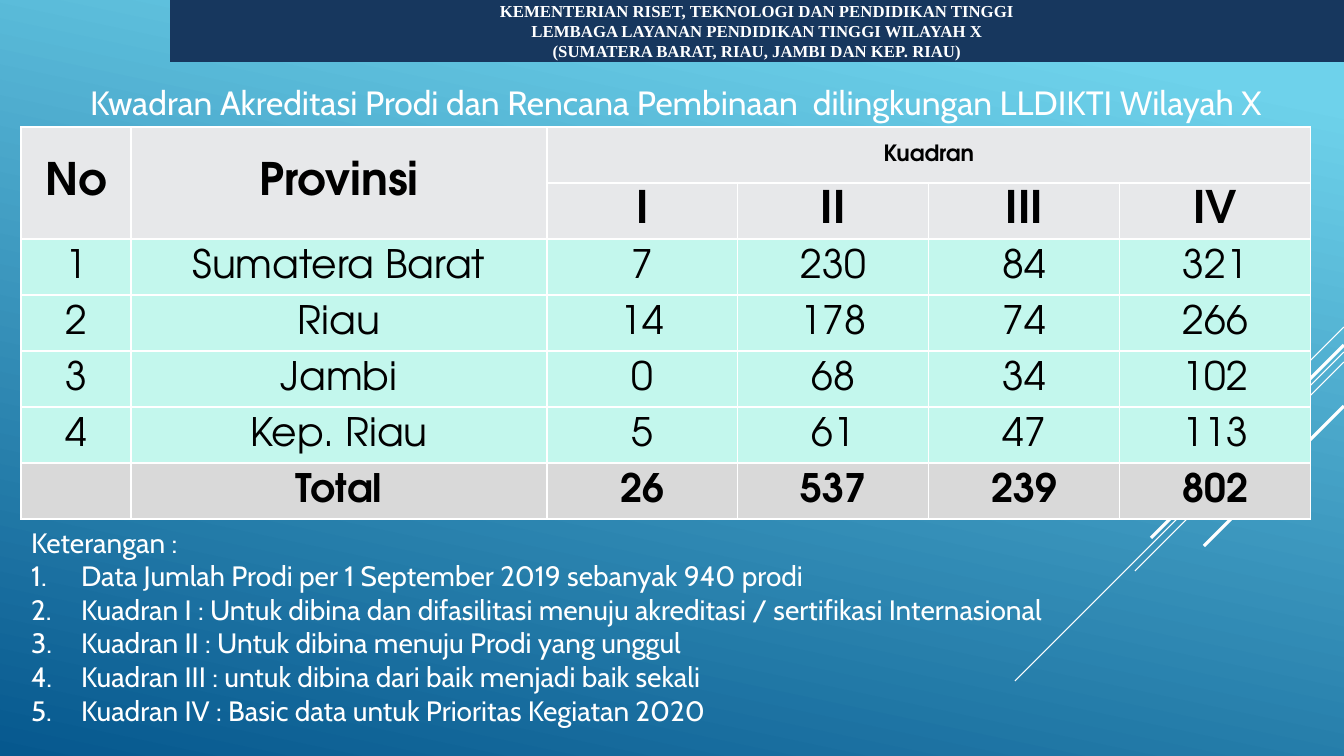
from pptx import Presentation, util as u
from pptx.dml.color import RGBColor
from pptx.enum import shapes, text
from pptx.oxml.ns import qn
from lxml import etree

SLIDE_W, SLIDE_H = 1344, 756
EMU_PER_PX = 12192000 / SLIDE_W
WHITE = "FFFFFF"
HEAD_FILL, BODY_FILL, TOTAL_FILL = "E7E8EA", "C3F7ED", "D9D9D9"
BODY_FONT, TABLE_FONT = "Cabin", "TeX Gyre Adventor"

COLUMN_WIDTHS = [110, 416, 191, 191, 191, 191]
ROW_HEIGHT = 56
RAYS = [(327, 101, 0.75), (352, 329, 0.75), (362, 209, 0.75), (345, 193, 2.25), (406, 140, 2.25)]
INSTITUTION = [
    "KEMENTERIAN RISET, TEKNOLOGI DAN PENDIDIKAN TINGGI",
    "LEMBAGA LAYANAN PENDIDIKAN TINGGI WILAYAH X",
    "(SUMATERA BARAT, RIAU, JAMBI DAN KEP. RIAU)",
]
HEADING = "Kwadran Akreditasi Prodi dan Rencana Pembinaan  dilingkungan LLDIKTI Wilayah X"
QUADRANTS = [
    ["No", "Provinsi", "Kuadran", "", "", ""],
    ["", "", "I", "II", "III", "IV"],
    ["1", "Sumatera Barat", "7", "230", "84", "321"],
    ["2", "Riau", "14", "178", "74", "266"],
    ["3", "Jambi", "0", "68", "34", "102"],
    ["4", "Kep. Riau", "5", "61", "47", "113"],
    ["", "Total", "26", "537", "239", "802"],
]
NOTES = [
    "Keterangan :",
    "Data Jumlah Prodi per 1 September 2019 sebanyak 940 prodi",
    "Kuadran I : Untuk dibina dan difasilitasi menuju akreditasi / sertifikasi Internasional",
    "Kuadran II : Untuk dibina menuju Prodi yang unggul",
    "Kuadran III : untuk dibina dari baik menjadi baik sekali",
    "Kuadran IV : Basic data untuk Prioritas Kegiatan 2020",
]


def px(length):
    return u.Emu(round(length * EMU_PER_PX))


def color(hex_code):
    return RGBColor.from_string(hex_code)


def style(paragraph, font, size, hex_code, bold=False, align=text.PP_ALIGN.CENTER):
    paragraph.alignment = align
    paragraph.space_before = u.Pt(0)
    paragraph.font.name = font
    paragraph.font.size = u.Pt(size)
    paragraph.font.bold = bold
    paragraph.font.color.rgb = color(hex_code)


def place(shape, left, top, width, height):
    shape.left, shape.top = px(left), px(top)
    shape.width, shape.height = px(width), px(height)
    frame = shape.text_frame
    frame.word_wrap = True
    frame.auto_size = text.MSO_AUTO_SIZE.NONE
    frame.vertical_anchor = text.MSO_ANCHOR.TOP
    return frame


def paint_background(slide):
    fill = slide.background.fill
    fill.gradient()
    fill.gradient_angle = 258
    for stop, (position, hex_code) in zip(fill.gradient_stops, [(0.1, "6ED2EB"), (1, "06588E")]):
        stop.position = position
        stop.color.rgb = color(hex_code)


def add_ray(slide, top, reach, weight):
    ray = slide.shapes.add_connector(
        shapes.MSO_CONNECTOR.STRAIGHT,
        px(SLIDE_W), px(top), px(SLIDE_W - reach), px(top + reach))
    ray.line.color.rgb = color(WHITE)
    ray.line.width = u.Pt(weight)
    etree.SubElement(ray._element.spPr, qn("a:effectLst"))


def add_banner(slide):
    banner = slide.shapes.add_shape(
        shapes.MSO_SHAPE.RECTANGLE, px(170), 0, px(SLIDE_W - 170), px(62))
    banner.shadow.inherit = False
    banner.fill.solid()
    banner.fill.fore_color.rgb = color("17375E")
    banner.line.fill.background()
    frame = banner.text_frame
    frame.margin_left = frame.margin_right = frame.margin_top = frame.margin_bottom = 0
    frame.text = "\n".join(INSTITUTION)
    for paragraph in frame.paragraphs:
        style(paragraph, "Times New Roman", 12, WHITE, bold=True)


def fill_heading(slide):
    frame = place(slide.shapes.title, 4, 77, SLIDE_W, 50)
    frame.text = HEADING
    style(frame.paragraphs[0], BODY_FONT, 24, WHITE)


def set_numbering(paragraph, numbered):
    props = paragraph._p.get_or_add_pPr()
    indent = px(50) if numbered else 0
    props.set("marL", str(indent))
    props.set("indent", str(-indent))
    if numbered:
        etree.SubElement(props, qn("a:buFont"), typeface="+mj-lt")
        etree.SubElement(props, qn("a:buAutoNum"), type="arabicPeriod")
    else:
        etree.SubElement(props, qn("a:buNone"))


def fill_notes(slide):
    frame = place(slide.placeholders[1], 21, 520, 1280, 214)
    frame.text = "\n".join(NOTES)
    for index, paragraph in enumerate(frame.paragraphs):
        set_numbering(paragraph, index > 0)
        style(paragraph, BODY_FONT, 20, WHITE, align=text.PP_ALIGN.LEFT)


def add_borders(cell):
    props = cell._tc.get_or_add_tcPr()
    for index, side in enumerate(["lnL", "lnR", "lnT", "lnB"]):
        border = etree.Element(qn("a:" + side), w=str(u.Pt(1)))
        solid = etree.SubElement(border, qn("a:solidFill"))
        etree.SubElement(solid, qn("a:srgbClr"), val=WHITE)
        props.insert(index, border)


def format_cell(cell, label, fill, size, bold):
    cell.fill.solid()
    cell.fill.fore_color.rgb = color(fill)
    cell.vertical_anchor = text.MSO_ANCHOR.MIDDLE
    cell.margin_left = cell.margin_right = cell.margin_top = px(1)
    cell.margin_bottom = 0
    cell.text = label
    style(cell.text_frame.paragraphs[0], TABLE_FONT, size, "000000", bold)
    add_borders(cell)


def add_quadrant_table(slide):
    rows, columns = len(QUADRANTS), len(COLUMN_WIDTHS)
    table = slide.shapes.add_table(
        rows, columns, px(21), px(127), px(sum(COLUMN_WIDTHS)), px(rows * ROW_HEIGHT)).table
    table.first_row = table.horz_banding = False
    for column, width in zip(table.columns, COLUMN_WIDTHS):
        column.width = px(width)
    for r, labels in enumerate(QUADRANTS):
        table.rows[r].height = px(ROW_HEIGHT)
        is_head, is_total = r < 2, r == rows - 1
        fill = HEAD_FILL if is_head else TOTAL_FILL if is_total else BODY_FILL
        for c, label in enumerate(labels):
            size = 16 if label == "Kuadran" else 32 if is_head else 28
            format_cell(table.cell(r, c), label, fill, size, is_head or is_total)
    table.cell(0, 0).merge(table.cell(1, 0))
    table.cell(0, 1).merge(table.cell(1, 1))
    table.cell(0, 2).merge(table.cell(0, columns - 1))


def main():
    deck = Presentation()
    deck.slide_width, deck.slide_height = px(SLIDE_W), px(SLIDE_H)
    slide = deck.slides.add_slide(deck.slide_layouts[1])
    paint_background(slide)
    for top, reach, weight in RAYS:
        add_ray(slide, top, reach, weight)
    add_banner(slide)
    fill_heading(slide)
    add_quadrant_table(slide)
    fill_notes(slide)
    deck.save("out.pptx")


if __name__ == "__main__":
    main()
